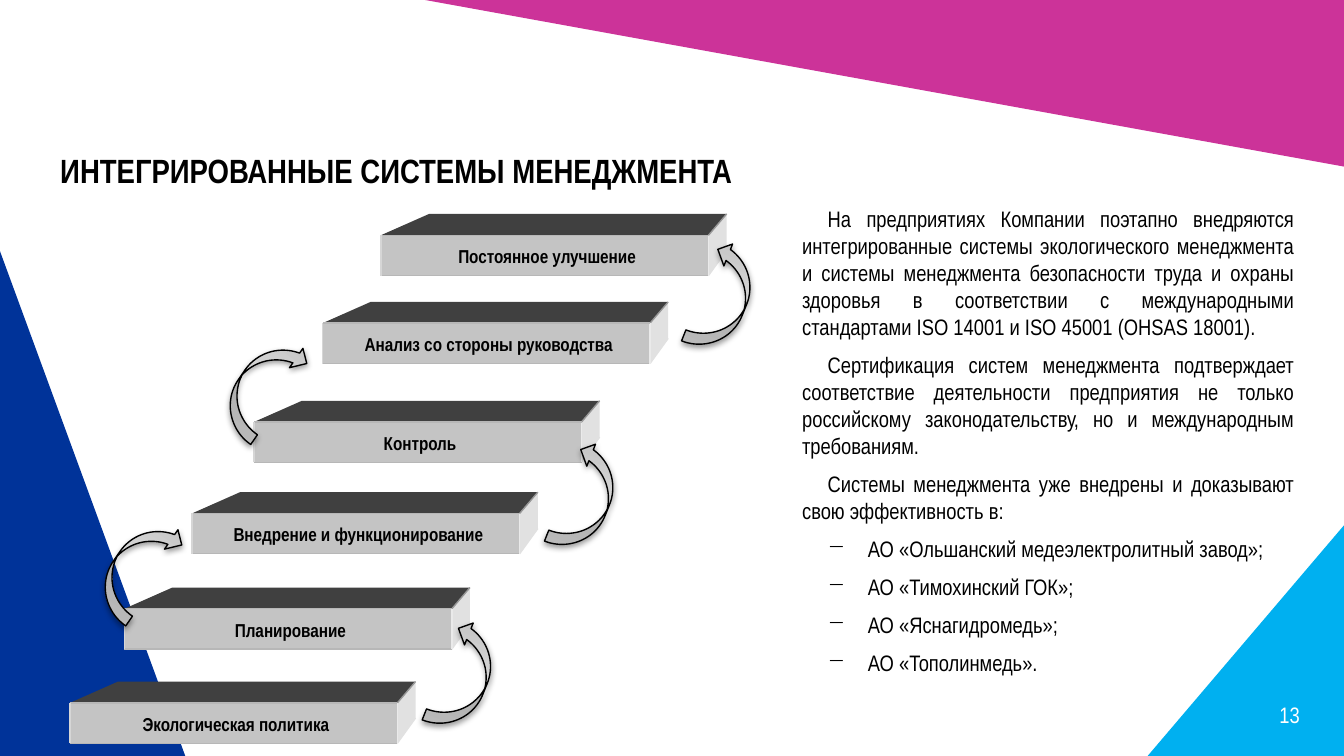
"""Builds the slide on integrated management systems on a grid of 100 columns."""
import pptx
import pptx.dml.color
import pptx.enum.shapes
import pptx.enum.text
import pptx.oxml
import pptx.oxml.ns
import pptx.util
from lxml import etree

RGBColor = pptx.dml.color.RGBColor
Shape = pptx.enum.shapes.MSO_SHAPE
Align = pptx.enum.text.PP_ALIGN
Pt = pptx.util.Pt
qn = pptx.oxml.ns.qn

COLUMNS, ROWS = 100, 56.25
CELL = pptx.util.Inches(0.1)
FONT = "Arial Narrow"

BLACK = RGBColor(0x00, 0x00, 0x00)
WHITE = RGBColor(0xFF, 0xFF, 0xFF)
MAGENTA = RGBColor(0xCC, 0x33, 0x99)
NAVY = RGBColor(0x00, 0x33, 0x99)
SKY = RGBColor(0x00, 0xB0, 0xF0)
FRONT = RGBColor(0xC4, 0xC4, 0xC4)
TOP = RGBColor(0x40, 0x40, 0x40)
SIDE = RGBColor(0xE1, 0xE1, 0xE1)
RIDGE = RGBColor(0x98, 0x98, 0x98)
RIM = RGBColor(0xB7, 0xB7, 0xB7)
RIGHT_RIM = RGBColor(0xEA, 0xEA, 0xEA)
LEFT_RIM = RGBColor(0xD6, 0xD6, 0xD6)

STEP_WIDTH, STEP_HEIGHT = 24.37, 3
DEPTH_X, DEPTH_Y, TOP_INSET = 1.35, 1.58, 3.57
STEPS = [
    ("Экологическая политика", 5.2, 52.3),
    ("Планирование", 9.25, 45.3),
    ("Внедрение и функционирование", 14.3, 38.2),
    ("Контроль", 18.9, 31.4),
    ("Анализ со стороны руководства", 24, 24.05),
    ("Постоянное улучшение", 28.35, 17.5),
]
RIGHT_ARROWS = [(32.8, 46.3), (41.9, 33), (52.1, 18.1)]
LEFT_ARROWS = [(8.5, 38.1), (17.8, 24.6)]

BODY = [
    "На предприятиях Компании поэтапно внедряются интегрированные системы "
    "экологического менеджмента и системы менеджмента безопасности труда и "
    "охраны здоровья в соответствии с международными стандартами "
    "ISO 14001 и ISO 45001 (OHSAS 18001).",
    "Сертификация систем менеджмента подтверждает соответствие деятельности "
    "предприятия не только российскому законодательству, но и международным "
    "требованиям.",
    "Системы менеджмента уже внедрены и доказывают свою эффективность в:",
]
PLANTS = [
    "АО «Ольшанский медеэлектролитный завод»;",
    "АО «Тимохинский ГОК»;",
    "АО «Яснагидромедь»;",
    "АО «Тополинмедь».",
]

ARROW_GRADIENT = (
    f'<a:gradFill {pptx.oxml.ns.nsdecls("a")} rotWithShape="1"><a:gsLst>'
    '<a:gs pos="0"><a:srgbClr val="BDBDBD"/></a:gs>'
    '<a:gs pos="35000"><a:srgbClr val="D1D1D1"/></a:gs>'
    '<a:gs pos="100000"><a:srgbClr val="EEEEEE"/></a:gs>'
    '</a:gsLst><a:lin ang="16200000" scaled="1"/></a:gradFill>'
)
ARROW_SHADOW = (
    f'<a:effectLst {pptx.oxml.ns.nsdecls("a")}>'
    '<a:outerShdw blurRad="40000" dist="20000" dir="5400000" rotWithShape="0">'
    '<a:srgbClr val="000000"><a:alpha val="38000"/></a:srgbClr>'
    '</a:outerShdw></a:effectLst>'
)


def grid(*cells):
    return [round(cell * CELL) for cell in cells]


def add_filled(slide, kind, box, color, flip="", rotation=0):
    shape = slide.shapes.add_shape(kind, *grid(*box))
    shape.shadow.inherit = False
    shape.fill.solid()
    shape.fill.fore_color.rgb = color
    shape.line.fill.background()
    shape.rotation = rotation
    for axis in flip:
        shape._element.spPr.find(qn("a:xfrm")).set(f"flip{axis}", "1")
    return shape


def add_polygon(slide, points, color):
    corners = [grid(*point) for point in points]
    builder = slide.shapes.build_freeform(*corners[0], scale=1.0)
    builder.add_line_segments(corners[1:], close=True)
    shape = builder.convert_to_shape()
    shape.shadow.inherit = False
    shape.fill.solid()
    shape.fill.fore_color.rgb = color
    shape.line.fill.background()


def add_edge(slide, start, end, color):
    straight = pptx.enum.shapes.MSO_CONNECTOR.STRAIGHT
    edge = slide.shapes.add_connector(straight, *grid(*start, *end))
    edge.line.color.rgb = color
    edge.line.width = Pt(0.75)
    etree.SubElement(edge._element.spPr, qn("a:effectLst"))


def add_text_frame(slide, box, grow=True):
    frame = slide.shapes.add_textbox(*grid(*box)).text_frame
    frame.word_wrap = True
    if grow:
        frame.auto_size = pptx.enum.text.MSO_AUTO_SIZE.SHAPE_TO_FIT_TEXT
    return frame


def write(paragraph, text, size, color=BLACK, bold=False, align=Align.LEFT):
    paragraph.text = text
    paragraph.alignment = align
    font = paragraph.font
    font.name, font.size, font.bold = FONT, Pt(size), bold
    font.color.rgb = color


def add_step(slide, label, left, top):
    right, bottom = left + STEP_WIDTH, top + STEP_HEIGHT
    back, upper = right + DEPTH_X, top - DEPTH_Y
    lower = bottom - 1.87
    add_polygon(slide, [(right, bottom), (right, top), (back, upper), (back, lower)], SIDE)
    add_edge(slide, (right, bottom), (back, lower), SIDE)
    add_polygon(slide, [(right, top), (left, top), (left + TOP_INSET, upper), (back, upper)], TOP)
    add_edge(slide, (right, top), (back, upper), RIDGE)
    add_filled(slide, Shape.RECTANGLE, (left, top, STEP_WIDTH, STEP_HEIGHT), FRONT)
    add_edge(slide, (left, bottom), (right, bottom), RIM)
    add_edge(slide, (right, bottom), (right, top), RIGHT_RIM)
    add_edge(slide, (right, top), (left, top), RIM)
    add_edge(slide, (left, top), (left, bottom), LEFT_RIM)
    frame = add_text_frame(slide, (left + 0.1, top + 0.72, 24.5, 1.6))
    frame.margin_left = frame.margin_right = frame.margin_top = frame.margin_bottom = 0
    write(frame.paragraphs[0], label, 10, bold=True, align=Align.CENTER)


def add_curved_arrow(slide, left, top, flip, rotation):
    box = (left, top, 3.5, 8.2)
    arrow = add_filled(slide, Shape.CURVED_RIGHT_ARROW, box, FRONT, flip, rotation)
    arrow.line.color.rgb = BLACK
    arrow.line.width = Pt(0.75)
    properties = arrow._element.spPr
    for tag, xml in (("a:solidFill", ARROW_GRADIENT), ("a:effectLst", ARROW_SHADOW)):
        properties.replace(properties.find(qn(tag)), pptx.oxml.parse_xml(xml))


def add_body(slide):
    frame = add_text_frame(slide, (58.7, 14.8, 38.6, 36.4))
    for index, text in enumerate(BODY + PLANTS):
        paragraph = frame.paragraphs[0] if index == 0 else frame.add_paragraph()
        listed = index >= len(BODY)
        margin, indent = grid(4.9, -3) if listed else grid(0, 1.9)
        properties = paragraph._p.get_or_add_pPr()
        properties.set("marL", str(margin))
        properties.set("indent", str(indent))
        paragraph.space_after = Pt(6)
        if listed:
            etree.SubElement(properties, qn("a:buChar")).set("char", "−")
        write(paragraph, text, 12, align=Align.LEFT if listed else Align.JUSTIFY)


def main():
    presentation = pptx.Presentation()
    presentation.slide_width, presentation.slide_height = grid(COLUMNS, ROWS)
    slide = presentation.slides.add_slide(presentation.slide_layouts[6])

    add_filled(slide, Shape.RIGHT_TRIANGLE, (31.6, 0, 68.4, 12.4), MAGENTA, "HV")
    add_filled(slide, Shape.RIGHT_TRIANGLE, (-11.9, 30.6, 37.6, 13.8), NAVY, "V", 270)
    add_filled(slide, Shape.RIGHT_TRIANGLE, (85.4, 39.1, 14.6, 17.15), SKY, "H")

    number = add_text_frame(slide, (74.4, 51.7, 23.3, 3), grow=False)
    number.vertical_anchor = pptx.enum.text.MSO_ANCHOR.MIDDLE
    write(number.paragraphs[0], "13", 12, WHITE, align=Align.RIGHT)
    title = add_text_frame(slide, (3.5, 10.7, 71.7, 4))
    write(title.paragraphs[0], "ИНТЕГРИРОВАННЫЕ СИСТЕМЫ МЕНЕДЖМЕНТА", 18, bold=True)
    add_body(slide)

    for label, left, top in STEPS:
        add_step(slide, label, left, top)
    for left, top in RIGHT_ARROWS:
        add_curved_arrow(slide, left, top, "HV", 21.6)
    for left, top in LEFT_ARROWS:
        add_curved_arrow(slide, left, top, "V", 34.7)

    presentation.save("out.pptx")


if __name__ == "__main__":
    main()
